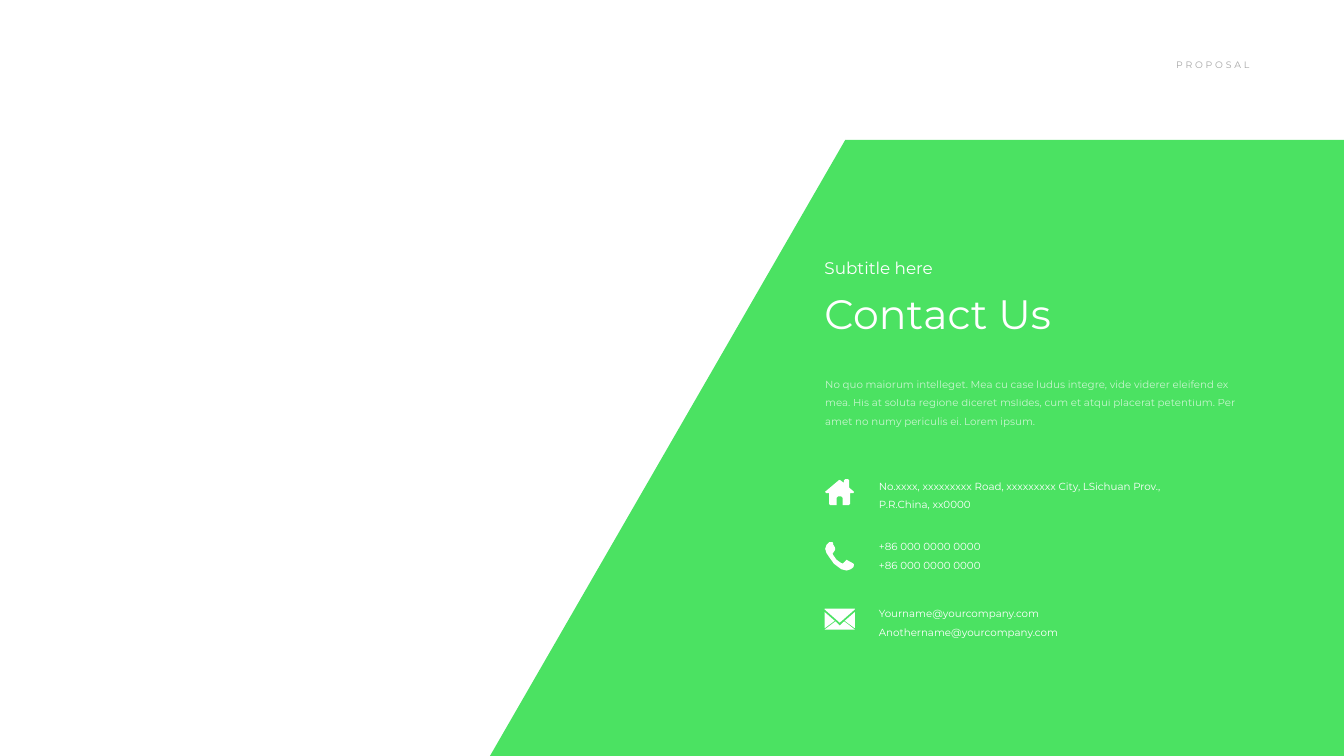
from dataclasses import dataclass

from lxml.etree import SubElement
from pptx import Presentation
from pptx.dml.color import RGBColor
from pptx.enum.text import MSO_ANCHOR, MSO_AUTO_SIZE, PP_ALIGN
from pptx.oxml.ns import qn
from pptx.slide import Slide
from pptx.util import Cm, Pt

WIDTH, HEIGHT = 50.8, 28.58

HOUSE = [
    (0.76, 0), (0.86, 0), (0.91, 0.05), (0.91, 0.33), (1.09, 0.48), (1.07, 0.53),
    (0.94, 0.53), (0.94, 0.94), (0.89, 0.99), (0.66, 0.99), (0.66, 0.71),
    (0.61, 0.66), (0.48, 0.66), (0.43, 0.71), (0.43, 0.99), (0.2, 0.99),
    (0.15, 0.94), (0.15, 0.53), (0.03, 0.53), (0, 0.48), (0.51, 0.05),
    (0.56, 0.03), (0.58, 0.05), (0.71, 0.15), (0.71, 0.05),
]
PHONE = [
    (0.2, 0), (0.28, 0), (0.3, 0.03), (0.3, 0.08), (0.36, 0.18), (0.38, 0.23),
    (0.38, 0.28), (0.33, 0.36), (0.28, 0.43), (0.3, 0.48), (0.43, 0.66),
    (0.61, 0.79), (0.64, 0.79), (0.66, 0.81), (0.74, 0.74), (0.81, 0.66),
    (0.89, 0.71), (0.99, 0.76), (1.07, 0.81), (1.09, 0.84), (1.07, 0.94),
    (0.97, 1.02), (0.81, 1.07), (0.61, 1.02), (0.33, 0.81), (0.13, 0.53),
    (0.05, 0.41), (0, 0.25), (0.05, 0.1), (0.15, 0),
]
ENVELOPE_WIDTH = 1.14
ENVELOPE_SIDE = [(0, 0.13), (0.38, 0.46), (0, 0.74)]
ENVELOPE = [
    [(0, 0), (ENVELOPE_WIDTH, 0), (ENVELOPE_WIDTH, 0.03), (0.57, 0.53), (0, 0.03)],
    ENVELOPE_SIDE,
    [(ENVELOPE_WIDTH - x, y) for x, y in ENVELOPE_SIDE],
    [(0.41, 0.48), (0.57, 0.64), (0.74, 0.48), (ENVELOPE_WIDTH, 0.79), (0, 0.79)],
]


def rgb(color):
    return RGBColor.from_string(color)


@dataclass
class SlideBuilder:
    slide: Slide
    font: str = "Montserrat"
    green: str = "4BE262"
    white: str = "FFFFFF"
    gray: str = "A6A6A6"

    def outline(self, points, color, left=0, top=0, shapes=None):
        """Fill a closed polygon whose points are offsets from left and top."""
        corners = [(Cm(left + x), Cm(top + y)) for x, y in points]
        builder = (shapes or self.slide.shapes).build_freeform(*corners[0], scale=1.0)
        builder.add_line_segments(corners[1:], close=True)
        shape = builder.convert_to_shape()
        shape.shadow.inherit = False
        shape.fill.solid()
        shape.fill.fore_color.rgb = rgb(color)
        shape.line.fill.background()

    def icon(self, outlines, left, top):
        shapes = self.slide.shapes
        if len(outlines) > 1:
            shapes = shapes.add_group_shape().shapes
        for points in outlines:
            self.outline(points, self.white, left, top, shapes)

    def run(self, paragraph, text, size, color=None, alpha=None, tracking=None):
        """Add a styled run; alpha is in percent, tracking in points."""
        run = paragraph.add_run()
        run.text = text
        run.font.name = self.font
        run.font.size = Pt(size)
        run.font.color.rgb = rgb(color or self.white)
        properties = run.font._element
        if alpha:
            fill = properties.find(qn("a:solidFill"))
            SubElement(fill[0], qn("a:alpha"), val=str(alpha * 1000))
        if tracking:
            properties.set("spc", str(tracking * 100))

    def text_box(self, left, top, width, height):
        box = self.slide.shapes.add_textbox(Cm(left), Cm(top), Cm(width), Cm(height))
        box.text_frame.word_wrap = True
        return box.text_frame

    def header(self, text):
        paragraph = self.text_box(41.48, 2.13, 5.99, 0.69).paragraphs[0]
        paragraph.alignment = PP_ALIGN.RIGHT
        self.run(paragraph, text, 10, self.gray, tracking=3)

    def title(self, subtitle, text):
        title = self.slide.shapes.title
        title.left, title.top = Cm(30.91), Cm(9.6)
        title.width, title.height = Cm(11.73), Cm(3.33)
        frame = title.text_frame
        frame.auto_size = MSO_AUTO_SIZE.NONE
        frame.vertical_anchor = MSO_ANCHOR.TOP
        first, second = frame.paragraphs[0], frame.add_paragraph()
        first.alignment = second.alignment = PP_ALIGN.LEFT
        second.space_before = Pt(12)
        self.run(first, subtitle, 18)
        self.run(second, text, 44)

    def body(self, text):
        paragraph = self.text_box(30.94, 13.94, 16.15, 2.29).paragraphs[0]
        paragraph.line_spacing = 1.5
        paragraph.space_before = Pt(12)
        self.run(paragraph, text, 11, alpha=70)

    def contact(self, lines, top, width, height, first_spacing=1.5):
        frame = self.text_box(33.22, top, width, height)
        frame.vertical_anchor = MSO_ANCHOR.MIDDLE
        frame.margin_left = frame.margin_right = 0
        frame.margin_top = frame.margin_bottom = Cm(0.38)
        for index, line in enumerate(lines):
            paragraph = frame.add_paragraph() if index else frame.paragraphs[0]
            paragraph.line_spacing = 1.5 if index else first_spacing
            self.run(paragraph, line, 11)


def main():
    presentation = Presentation()
    presentation.slide_width, presentation.slide_height = Cm(WIDTH), Cm(HEIGHT)
    builder = SlideBuilder(presentation.slides.add_slide(presentation.slide_layouts[5]))

    builder.header("PROPOSAL")
    panel = [(31.95, 5.29), (WIDTH, 5.29), (WIDTH, HEIGHT), (18.52, HEIGHT)]
    builder.outline(panel, builder.green)

    # The title placeholder is created first, so bring it in front of the panel.
    title = builder.slide.shapes.title._element
    title.getparent().append(title)
    builder.title("Subtitle here", "Contact Us")
    builder.body(
        "No quo maiorum intelleget. Mea cu case ludus integre, vide viderer eleifend "
        "ex mea. His at soluta regione diceret mslides, cum et atqui placerat "
        "petentium. Per amet no numy periculis ei. Lorem ipsum."
    )

    builder.icon([HOUSE], 31.19, 18.11)
    builder.icon([PHONE], 31.19, 20.5)
    builder.icon(ENVELOPE, 31.17, 23.01)

    address = "No.xxxx, xxxxxxxxx Road, xxxxxxxxx City, LSichuan Prov., P.R.China, xx0000"
    builder.contact([address], 17.58, 10.95, 2.08)
    builder.contact(["+86 000 0000 0000"] * 2, 20.09, 8.99, 1.85, first_spacing=1)
    emails = ["Yourname@yourcompany.com", "Anothername@yourcompany.com"]
    builder.contact(emails, 22.4, 8.99, 2.08)

    presentation.save("out.pptx")


if __name__ == "__main__":
    main()
